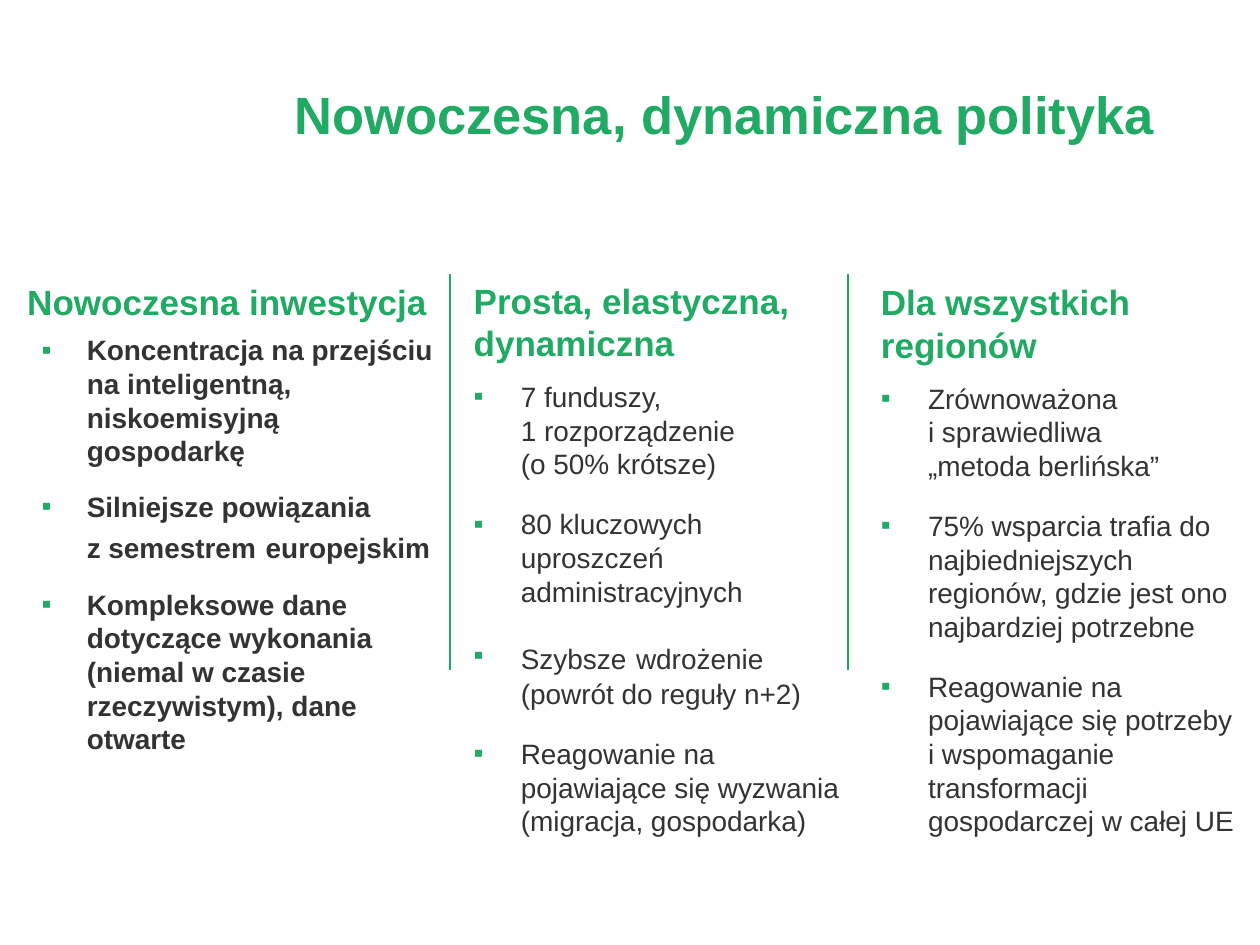
from dataclasses import dataclass
from lxml.etree import SubElement
from pptx import Presentation
from pptx.dml.color import RGBColor
from pptx.enum.shapes import MSO_CONNECTOR
from pptx.enum.text import MSO_ANCHOR, PP_ALIGN
from pptx.oxml.ns import qn
from pptx.slide import Slide
from pptx.util import Cm, Pt

COLORS = {"heading": "20AA63", "text": "333333", "divider": "1CAA61"}
WIDE_SPACE = "~"
TIED_WORDS = "_"
NO_BREAK_SPACE = chr(160)


@dataclass
class ColumnsPage:
    page: Slide
    font: str = "Arial"
    bullet: str = "▪"

    def text_box(self, left, top, width, height):
        frame = self.page.shapes.add_textbox(Cm(left), Cm(top), Cm(width), Cm(height)).text_frame
        frame.word_wrap = True
        frame.vertical_anchor = MSO_ANCHOR.TOP
        return frame

    def style(self, paragraph, size, color, bold):
        paragraph.font.name = self.font
        paragraph.font.size = Pt(size)
        paragraph.font.bold = bold
        paragraph.font.color.rgb = RGBColor.from_string(COLORS[color])

    def title(self, text, left, top, width, height):
        frame = self.text_box(left, top, width, height)
        paragraph = frame.paragraphs[0]
        paragraph.text = text
        paragraph.alignment = PP_ALIGN.CENTER
        self.style(paragraph, 30, "heading", True)

    def bullet_item(self, frame, text, bold, inset, hanging, gap):
        paragraph = frame.add_paragraph()
        before, wide, after = text.replace(TIED_WORDS, NO_BREAK_SPACE).partition(WIDE_SPACE)
        paragraph.text = before
        if wide:
            space = paragraph.add_run()
            space.text = " "
            space.font.size = Pt(20)
            space.font.bold = True
            space.font.italic = True
            paragraph.add_run().text = after
        properties = paragraph._p.get_or_add_pPr()
        properties.set("marL", str(Cm(inset + hanging)))
        properties.set("indent", str(-Cm(hanging)))
        color = SubElement(properties, qn("a:buClr"))
        SubElement(color, qn("a:srgbClr"), val=COLORS["heading"])
        SubElement(properties, qn("a:buFont"), typeface=self.font)
        SubElement(properties, qn("a:buChar"), char=self.bullet)
        paragraph.space_before = Pt(3.2)
        paragraph.space_after = Pt(gap)
        self.style(paragraph, 16, "text", bold)

    def column(self, heading, items, left, top, width, bold=False,
               inset=0, hanging=0.95, heading_gap=6, gap=12):
        frame = self.text_box(left, top, width, 10.9)
        first = frame.paragraphs[0]
        first.text = heading
        first.space_after = Pt(heading_gap)
        self.style(first, 20, "heading", True)
        for item in items:
            self.bullet_item(frame, item, bold, inset, hanging, gap)

    def divider(self, x, top, bottom):
        line = self.page.shapes.add_connector(MSO_CONNECTOR.STRAIGHT, Cm(x), Cm(top), Cm(x), Cm(bottom))
        line.line.color.rgb = RGBColor.from_string(COLORS["divider"])
        line.line.width = Pt(1)
        SubElement(line._element.spPr, qn("a:effectLst"))


def main():
    deck = Presentation()
    deck.slide_width, deck.slide_height = Cm(25.4), Cm(19.05)
    sheet = ColumnsPage(deck.slides.add_slide(deck.slide_layouts[6]))
    sheet.title("Nowoczesna, dynamiczna polityka", 5.11, 1.52, 19, 2)
    sheet.column(
        "Nowoczesna inwestycja",
        [
            "Koncentracja na przejściu na inteligentną, niskoemisyjną gospodarkę",
            "Silniejsze powiązania z_semestrem~europejskim",
            "Kompleksowe dane dotyczące wykonania (niemal w_czasie rzeczywistym), dane otwarte",
        ],
        0.3, 5.54, 8.76, bold=True, inset=0.29, hanging=0.91, heading_gap=2.5, gap=9.5,
    )
    sheet.column(
        "Prosta, elastyczna, dynamiczna",
        [
            "7_funduszy, 1_rozporządzenie \n(o 50% krótsze)",
            "80_kluczowych uproszczeń administracyjnych",
            "Szybsze~wdrożenie (powrót do reguły n+2)",
            "Reagowanie na pojawiające się wyzwania (migracja, gospodarka)",
        ],
        9.3, 5.51, 8,
    )
    sheet.column(
        "Dla wszystkich regionów",
        [
            "Zrównoważona i_sprawiedliwa \n„metoda berlińska”",
            "75% wsparcia trafia do najbiedniejszych regionów, gdzie jest ono najbardziej potrzebne",
            "Reagowanie na pojawiające się potrzeby i_wspomaganie transformacji gospodarczej w_całej UE",
        ],
        17.51, 5.54, 7.89,
    )
    for x in (17.1, 9.07):
        sheet.divider(x, 5.53, 13.51)
    deck.save("out.pptx")


if __name__ == "__main__":
    main()
